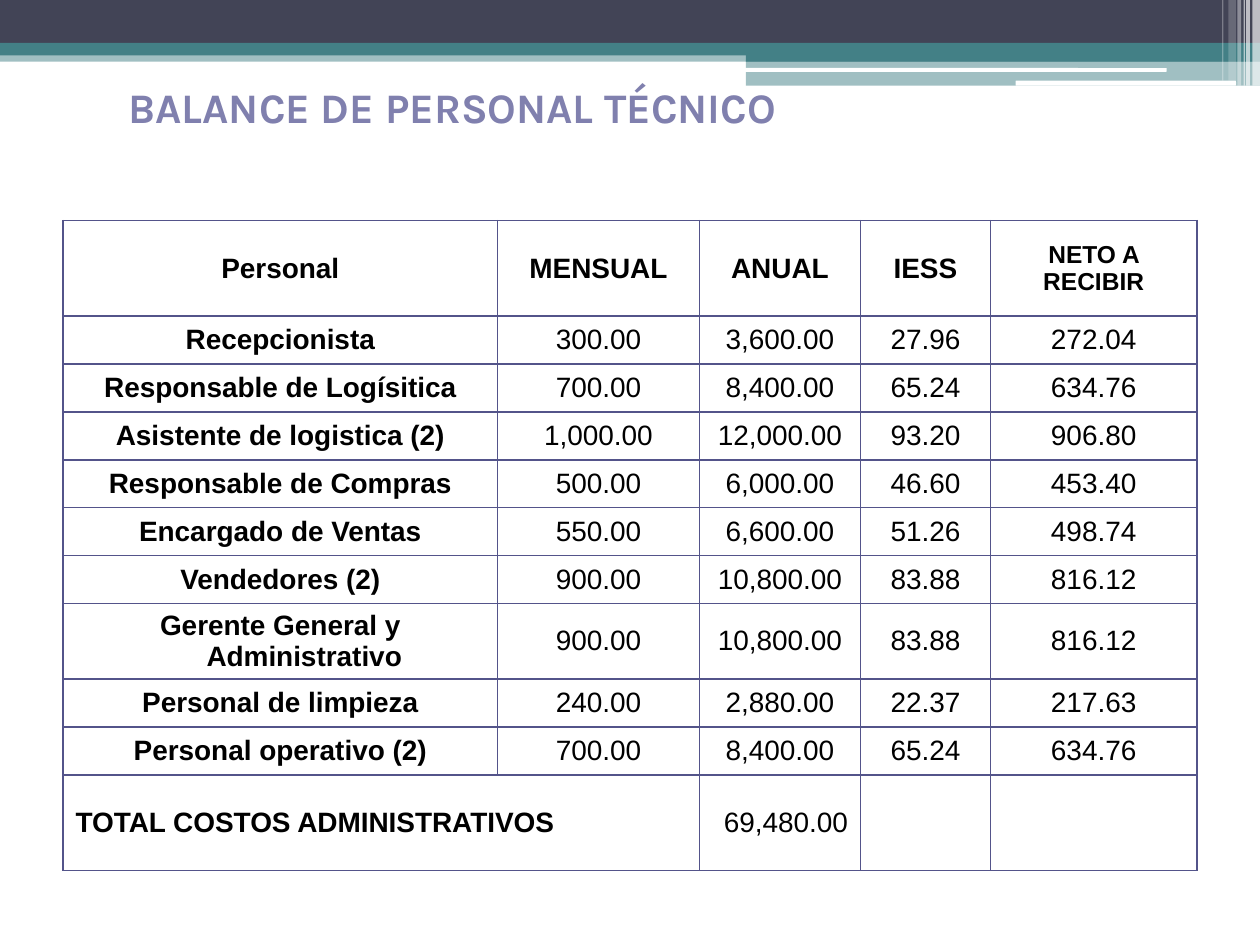
from lxml.etree import SubElement
from pptx import Presentation
from pptx.dml.color import RGBColor
from pptx.enum.shapes import MSO_SHAPE as Shape
from pptx.enum.text import MSO_ANCHOR as Anchor, PP_ALIGN as Align
from pptx.oxml import parse_xml
from pptx.oxml.ns import nsdecls, qn
from pptx.util import Inches, Pt

WHITE = RGBColor(0xFF, 0xFF, 0xFF)
BLACK = RGBColor(0, 0, 0)
SLATE = RGBColor(0x42, 0x44, 0x56)
TEAL = RGBColor(0x43, 0x80, 0x86)
LAVENDER = RGBColor(0x80, 0x80, 0xAE)
GRID = RGBColor(0x53, 0x54, 0x8A)


def format_text(para, align, left, hanging, **font):
    """Set alignment, indents in inches and the font of every run."""
    para.alignment = align
    props = para._p.get_or_add_pPr()
    props.set("marL", str(Inches(left)))
    props.set("indent", str(-Inches(hanging)))
    color = font.pop("color")
    for span in para.runs:
        for name, value in font.items():
            setattr(span.font, name, value)
        span.font.color.rgb = color


def draw_borders(cell):
    props = cell._tc.get_or_add_tcPr()
    for position, side in enumerate(("lnL", "lnR", "lnT", "lnB")):
        line = parse_xml(
            f'<a:{side} {nsdecls("a")} w="{Pt(1)}"><a:solidFill>'
            f'<a:srgbClr val="{GRID}"/></a:solidFill></a:{side}>')
        props.insert(position, line)


deck = Presentation()
deck.slide_width, deck.slide_height = Inches(10), Inches(7.5)
page = deck.slides.add_slide(deck.slide_layouts[5])

# Header bands and stripes: shape, left, top, width, height, color, opacity %
RECT, ROUND = Shape.RECTANGLE, Shape.ROUNDED_RECTANGLE
bands = [
    (RECT, 0, 0.4, 10, 0.09, TEAL, 50),
    (RECT, 0, 0, 10, 0.34, SLATE, 100),
    (RECT, 0, 0.34, 10, 0.1, TEAL, 100),
    (RECT, 5.92, 0.39, 4.08, 0.1, TEAL, 100),
    (RECT, 5.92, 0.48, 4.08, 0.2, TEAL, 50),
    (ROUND, 5.91, 0.54, 3.35, 0.03, WHITE, 100),
    (ROUND, 8.06, 0.64, 1.75, 0.04, WHITE, 100),
]
stripes = [  # left, width, height, opacity %
    (9.94, 0.06, 0.68, 65), (9.89, 0.03, 0.68, 65), (9.87, 0.01, 0.68, 60),
    (9.82, 0.03, 0.68, 40), (9.75, 0.06, 0.64, 20), (9.7, 0.01, 0.64, 30),
]
bands += [(RECT, left, 0, width, height, WHITE, opacity)
          for left, width, height, opacity in stripes]
for kind, left, top, width, height, color, opacity in bands:
    band = page.shapes.add_shape(
        kind, Inches(left), Inches(top), Inches(width), Inches(height))
    band.shadow.inherit = False
    band.line.fill.background()
    band.fill.solid()
    band.fill.fore_color.rgb = color
    if opacity < 100:
        tint = band.fill._xPr.find(qn("a:solidFill"))[0]
        SubElement(tint, qn("a:alpha"), val=str(opacity * 1000))

title = page.shapes.title
title.left, title.top = 0, 0
title.width, title.height = Inches(9), Inches(1.25)
title.text_frame.text = "BALANCE DE PERSONAL TÉCNICO"
title.text_frame.vertical_anchor = Anchor.MIDDLE
title.text_frame.margin_top = Inches(0.5)
format_text(title.text_frame.paragraphs[0], Align.LEFT, 0.92, 0,
            name="Karla", size=Pt(24), bold=True, color=LAVENDER)

rows = [
    ("Personal", "MENSUAL", "ANUAL", "IESS", "NETO A RECIBIR"),
    ("Recepcionista", "300.00", "3,600.00", "27.96", "272.04"),
    ("Responsable de Logísitica", "700.00", "8,400.00", "65.24", "634.76"),
    ("Asistente de logistica (2)", "1,000.00", "12,000.00", "93.20", "906.80"),
    ("Responsable de Compras", "500.00", "6,000.00", "46.60", "453.40"),
    ("Encargado de Ventas", "550.00", "6,600.00", "51.26", "498.74"),
    ("Vendedores (2)", "900.00", "10,800.00", "83.88", "816.12"),
    ("Gerente General y Administrativo", "900.00", "10,800.00", "83.88", "816.12"),
    ("Personal de limpieza", "240.00", "2,880.00", "22.37", "217.63"),
    ("Personal operativo (2)", "700.00", "8,400.00", "65.24", "634.76"),
    ("TOTAL COSTOS ADMINISTRATIVOS", "", "69,480.00", "", ""),
]
column_widths = [3.45, 1.6, 1.28, 1.03, 1.64]
row_heights = [0.76] + [0.38] * 6 + [0.6] + [0.38] * 2 + [0.76]
total_row = len(rows) - 1

table = page.shapes.add_table(
    len(rows), len(column_widths), Inches(0.5), Inches(1.75),
    Inches(sum(column_widths)), Inches(sum(row_heights))).table
table.first_row = table.horz_banding = False
for column, width in zip(table.columns, column_widths):
    column.width = Inches(width)
for row, height in zip(table.rows, row_heights):
    row.height = Inches(height)

for r, values in enumerate(rows):
    for c, value in enumerate(values):
        cell = table.cell(r, c)
        cell.text = value
        cell.vertical_anchor = Anchor.MIDDLE
        cell.fill.background()
        draw_borders(cell)
        align = Align.CENTER
        if r == total_row:
            align = Align.LEFT if c == 0 else Align.RIGHT
        indent = 0 if r == 0 and c in (0, 4) else 0.38
        format_text(cell.text_frame.paragraphs[0], align, indent, indent,
                    name="Arial", size=Pt(14 if (r, c) == (0, 4) else 16),
                    bold=r == 0 or c == 0, color=BLACK)
table.cell(total_row, 0).merge(table.cell(total_row, 1))

deck.save("out.pptx")
